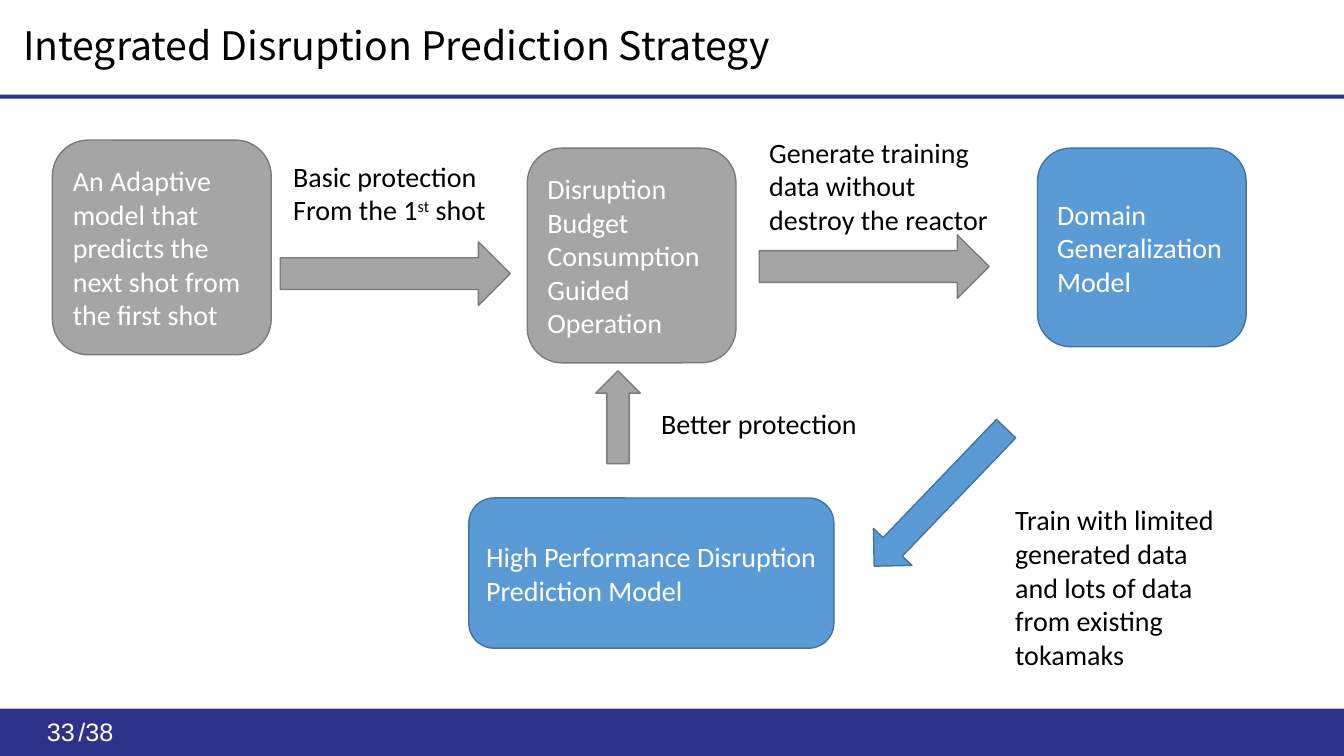
from pptx import Presentation
from pptx.dml.color import RGBColor as Color
from pptx.enum.shapes import MSO_SHAPE as Shape
from pptx.enum.text import MSO_ANCHOR as Anchor, PP_ALIGN as Align
from pptx.util import Inches, Pt

HUES = {"navy": "2F328B", "gray": "A5A5A5", "slate": "7A7A7A", "blue": "5B9BD5",
        "steel": "43739E", "white": "FFFFFF", "black": "000000"}
EDGES = {"gray": "slate", "blue": "steel"}
COLS, ROWS = 133.3, 75
CELL = Inches(0.1)

TITLE = "Integrated Disruption Prediction Strategy"
BARS = [(0, 70.3, COLS, 4.7), (0, 9.4, COLS, 0.4)]
PAGES = [
    (["/38"], (6.8, 70.6, 11.4, 4), Align.LEFT),
    (["33"], (0.5, 70.6, 7.9, 4), Align.RIGHT),
]
MODELS = [
    (["An Adaptive model that predicts the next shot from the first shot"],
     (5.2, 13.9, 21.7, 21.3), "gray"),
    (["Disruption Budget Consumption Guided", "Operation"],
     (52.3, 14.7, 20.7, 21.3), "gray"),
    (["Domain Generalization", "Model"], (102.9, 14.7, 20.7, 19.7), "blue"),
    (["High Performance Disruption Prediction Model"],
     (46.5, 49.4, 36.2, 14.9), "blue"),
]
ARROWS = [
    (Shape.RIGHT_ARROW, (27.8, 24, 22.8, 6.3), 0, "gray"),
    (Shape.RIGHT_ARROW, (75.3, 23.3, 22.8, 6.3), 0, "gray"),
    (Shape.DOWN_ARROW, (90.6, 39.9, 5.3, 18.9), 43.8, "blue"),
    (Shape.RIGHT_ARROW, (56.7, 39.2, 9.2, 4.4), 270, "gray"),
]
NOTES = [
    (["Basic protection", ("From the 1", "^st", " shot")], (28.1, 15.3, 21.4, 7.7), False),
    (["Generate training data without destroy the reactor"], (75.3, 12.9, 25.2, 11.1), True),
    (["Train with limited generated data and lots of data from existing tokamaks"],
     (99.7, 49.4, 22, 17.8), True),
    (["Better protection"], (64.6, 39.8, 22, 4.4), True),
]
BODY = {"name": "Calibri", "size": Pt(20)}
FOOT = {"name": "Arial", "size": Pt(18)}
HEAD = {"name": "Noto Sans CJK SC", "size": Pt(28)}


def tint(hue):
    return Color.from_string(HUES[hue])


def place(box):
    return [round(n * CELL) for n in box]


def style(font, look, hue):
    for key, val in look.items():
        setattr(font, key, val)
    font.color.rgb = tint(hue)


def write(frame, lines, look, hue, align=Align.LEFT):
    for i, line in enumerate(lines):
        para = frame.add_paragraph() if i else frame.paragraphs[0]
        para.alignment = align
        for part in (line,) if isinstance(line, str) else line:
            run = para.add_run()
            run.text = part.lstrip("^")
            style(run.font, look, hue)
            if part.startswith("^"):
                run._r.get_or_add_rPr().set("baseline", "30000")


def draw(kind, box, hue, turn=0):
    item = slide.shapes.add_shape(kind, *place(box))
    item.shadow.inherit = False
    item.rotation = turn
    item.fill.solid()
    item.fill.fore_color.rgb = tint(hue)
    if hue in EDGES:
        item.line.color.rgb = tint(EDGES[hue])
        item.line.width = Pt(1)
    else:
        item.line.fill.background()
    return item


def label(lines, box, look, hue, align=Align.LEFT, wrap=True):
    frame = slide.shapes.add_textbox(*place(box)).text_frame
    frame.word_wrap = wrap
    write(frame, lines, look, hue, align)


deck = Presentation()
deck.slide_width, deck.slide_height = place((COLS, ROWS))
slide = deck.slides.add_slide(deck.slide_layouts[5])

for bar in BARS:
    draw(Shape.RECTANGLE, bar, "navy")

title = slide.shapes.title
title.left, title.top, title.width, title.height = place((1.3, 0.4, 82.7, 8.7))
title.text_frame.vertical_anchor = Anchor.MIDDLE
write(title.text_frame, [TITLE], HEAD, "black")
title.text_frame.paragraphs[0].line_spacing = 0.9

for lines, box, align in PAGES:
    label(lines, box, FOOT, "white", align)
for lines, box, hue in MODELS:
    frame = draw(Shape.ROUNDED_RECTANGLE, box, hue).text_frame
    frame.word_wrap = True
    frame.vertical_anchor = Anchor.MIDDLE
    write(frame, lines, BODY, "white")
for kind, box, turn, hue in ARROWS:
    draw(kind, box, hue, turn)
for lines, box, wrap in NOTES:
    label(lines, box, BODY, "black", wrap=wrap)

deck.save("out.pptx")
